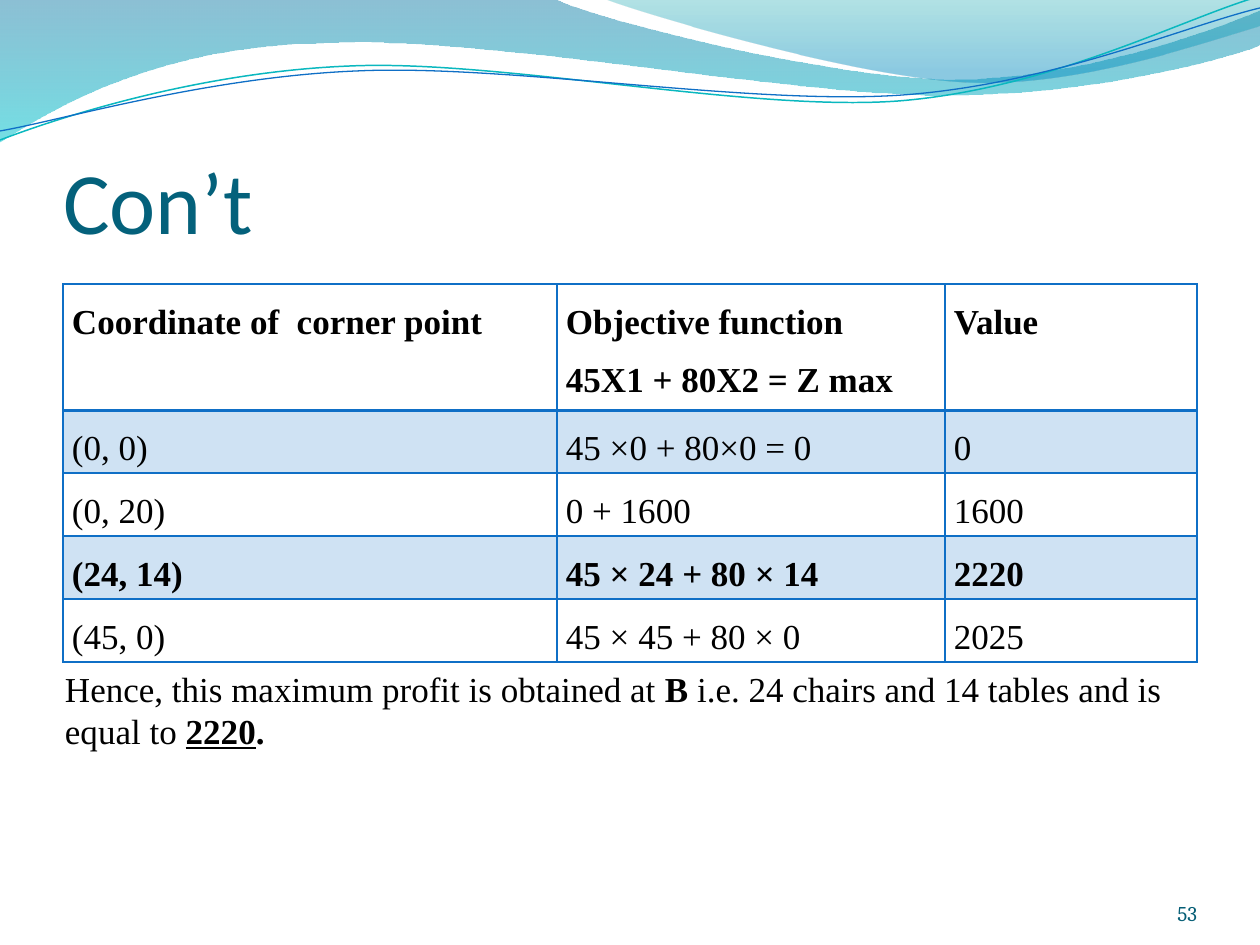
import pptx
import pptx.util
import pptx.dml.color
import pptx.enum.text
import pptx.oxml
import pptx.oxml.ns

PX = 914400 / 126
COLORS = {
    "deep": "0074A1", "aqua": "00C6CF", "teal": "00A1A9", "sky": "008BBF",
    "teal_line": "0AB8BF", "blue": "0F6FC6", "title": "04617B",
    "number": "045D75", "text": "000000",
}
SERIF = "Times New Roman"
CORNER_POINTS = [
    ("Coordinate of  corner point", "Objective function\n45X1 + 80X2 = Z max", "Value"),
    ("(0, 0)", "45 ×0 + 80×0 = 0", "0"),
    ("(0, 20)", "0 + 1600", "1600"),
    ("(24, 14)", "45 × 24 + 80 × 14", "2220"),
    ("(45, 0)", "45 × 45 + 80 × 0", "2025"),
]
BOLD_ROWS = (0, 3)
SHADED_ROWS = (1, 3)


def emu(px):
    return pptx.util.Emu(round(px * PX))


def rgb(name):
    return pptx.dml.color.RGBColor.from_string(COLORS[name])


def add_alpha(parent, percents):
    colors = parent.iter(pptx.oxml.ns.qn("a:srgbClr"))
    for color, percent in zip(colors, percents):
        alpha = color.makeelement(pptx.oxml.ns.qn("a:alpha"), {"val": str(percent * 1000)})
        color.append(alpha)


def bend_segments(outline, segments):
    route = next(outline._element.iter(pptx.oxml.ns.qn("a:path")))
    lines = iter(route.findall(pptx.oxml.ns.qn("a:lnTo")))
    for segment in segments:
        parts = [next(lines) for _ in range(len(segment) // 2)]
        if len(parts) == 3:
            curve = route.makeelement(pptx.oxml.ns.qn("a:cubicBezTo"), {})
            parts[0].addprevious(curve)
            for part in parts:
                curve.append(part[0])
                route.remove(part)


def add_outline(slide, start, segments, close):
    corners = [tuple(map(emu, pair)) for segment in segments
               for pair in zip(segment[::2], segment[1::2])]
    builder = slide.shapes.build_freeform(*map(emu, start))
    builder.add_line_segments(corners, close=close)
    outline = builder.convert_to_shape()
    bend_segments(outline, segments)
    outline.shadow.inherit = False
    return outline


def add_wave(slide, start, segments, stops):
    wave = add_outline(slide, start, segments, True)
    wave.line.fill.background()
    wave.fill.gradient()
    wave.fill.gradient_angle = 270
    for gradient_stop, (position, color, _) in zip(wave.fill.gradient_stops, stops):
        gradient_stop.position = position
        gradient_stop.color.rgb = rgb(color)
    add_alpha(wave._element.spPr, [alpha for _, _, alpha in stops])


def add_ripple(slide, start, segments, color, width):
    ripple = add_outline(slide, start, segments, False)
    ripple.fill.background()
    ripple.line.color.rgb = rgb(color)
    ripple.line.width = pptx.util.Pt(width)


def set_font(paragraph, name, size, color, bold=False):
    font = paragraph.font
    font.name, font.size, font.bold = name, pptx.util.Pt(size), bold
    font.color.rgb = rgb(color)


def add_text(slide, box, runs, font, align="LEFT", anchor="TOP", insets=(0, 0, 0, 0)):
    frame = slide.shapes.add_textbox(*map(emu, box)).text_frame
    frame.word_wrap = True
    frame.vertical_anchor = pptx.enum.text.MSO_ANCHOR[anchor]
    (frame.margin_left, frame.margin_top,
     frame.margin_right, frame.margin_bottom) = map(emu, insets)
    paragraph = frame.paragraphs[0]
    paragraph.alignment = pptx.enum.text.PP_ALIGN[align]
    set_font(paragraph, *font)
    for text, bold, underline in runs:
        run = paragraph.add_run()
        run.text = text
        if bold:
            run.font.bold = True
        if underline:
            run.font.underline = True


def add_borders(cell, widths):
    properties = cell._tc.get_or_add_tcPr()
    for side, width in zip("LRTB", widths):
        properties.append(pptx.oxml.parse_xml(
            f'<a:ln{side} {pptx.oxml.ns.nsdecls("a")} w="{width * 12700}">'
            f'<a:solidFill><a:srgbClr val="{COLORS["blue"]}"/></a:solidFill></a:ln{side}>'))


def fill_cell(cell, text, row):
    cell.margin_left = cell.margin_right = emu(9)
    cell.margin_top = cell.margin_bottom = 0
    cell.text = text
    for paragraph in cell.text_frame.paragraphs:
        paragraph.line_spacing = 1.5
        set_font(paragraph, SERIF, 20, "text", row in BOLD_ROWS)
    add_borders(cell, (1, 1, 2 if row == 1 else 1, 2 if row == 0 else 1))
    if row in SHADED_ROWS:
        cell.fill.solid()
        cell.fill.fore_color.rgb = rgb("blue")
        add_alpha(cell._tc.tcPr.find(pptx.oxml.ns.qn("a:solidFill")), [20])
    else:
        cell.fill.background()


def add_corner_table(slide):
    widths = (494, 388, 252)
    heights = (34, 52, 52, 52, 52)
    holder = slide.shapes.add_table(
        len(heights), len(widths), emu(63), emu(284), emu(sum(widths)), emu(sum(heights)))
    table = holder.table
    table.first_row = table.horz_banding = False
    for column, width in zip(table.columns, widths):
        column.width = emu(width)
    for row, (texts, height) in enumerate(zip(CORNER_POINTS, heights)):
        table.rows[row].height = emu(height)
        for column, text in enumerate(texts):
            fill_cell(table.cell(row, column), text, row)
    holder.height = emu(378)


def main():
    deck = pptx.Presentation()
    deck.slide_width, deck.slide_height = emu(1260), emu(945)
    slide = deck.slides.add_slide(deck.slide_layouts[6])

    add_wave(slide, (0, 0), [
        (554, -1), (600, 21, 837, 79, 955, 79), (1075, 79, 1207, 33, 1260, 11),
        (1261, 45), (1239, 55, 1096, 96, 940, 95), (784, 95, 481, 35, 324, 43),
        (163, 45, 58, 105, -1, 142),
    ], [(0, "deep", 45), (1, "aqua", 55)])
    add_wave(slide, (604, -1), [
        (641, 14, 859, 78, 969, 82), (1079, 87, 1211, 40, 1260, 26), (1260, 0),
    ], [(0, "teal", 30), (0.8, "sky", 45)])
    add_ripple(slide, (0, 140), [
        (60, 117, 199, 72, 349, 66), (498, 59, 747, 112, 898, 101),
        (1050, 89, 1182, 19, 1257, -3),
    ], "teal_line", 0.85)
    add_ripple(slide, (0, 131), [
        (59, 121, 207, 77, 357, 71), (508, 64, 752, 106, 903, 95),
        (1053, 84, 1185, 26, 1260, 8),
    ], "blue", 0.75)

    add_text(slide, (63, 97, 1155, 155), [("Con’t", False, False)],
             ("Calibri", 50, "title"), anchor="BOTTOM", insets=(0, 6, 0, 0))
    add_corner_table(slide)
    add_text(slide, (1092, 876, 105, 50), [("53", False, False)],
             ("Cambria", 12, "number"), align="RIGHT", anchor="BOTTOM")
    add_text(slide, (53, 661, 1155, 97), [
        ("Hence, this maximum profit is obtained at ", False, False),
        ("B", True, False),
        (" i.e. 24 chairs and 14 tables and is equal to ", False, False),
        ("2220", True, True),
        (".", True, False),
    ], (SERIF, 20, "text"), insets=(12, 6, 12, 6))
    deck.save("out.pptx")


if __name__ == "__main__":
    main()
